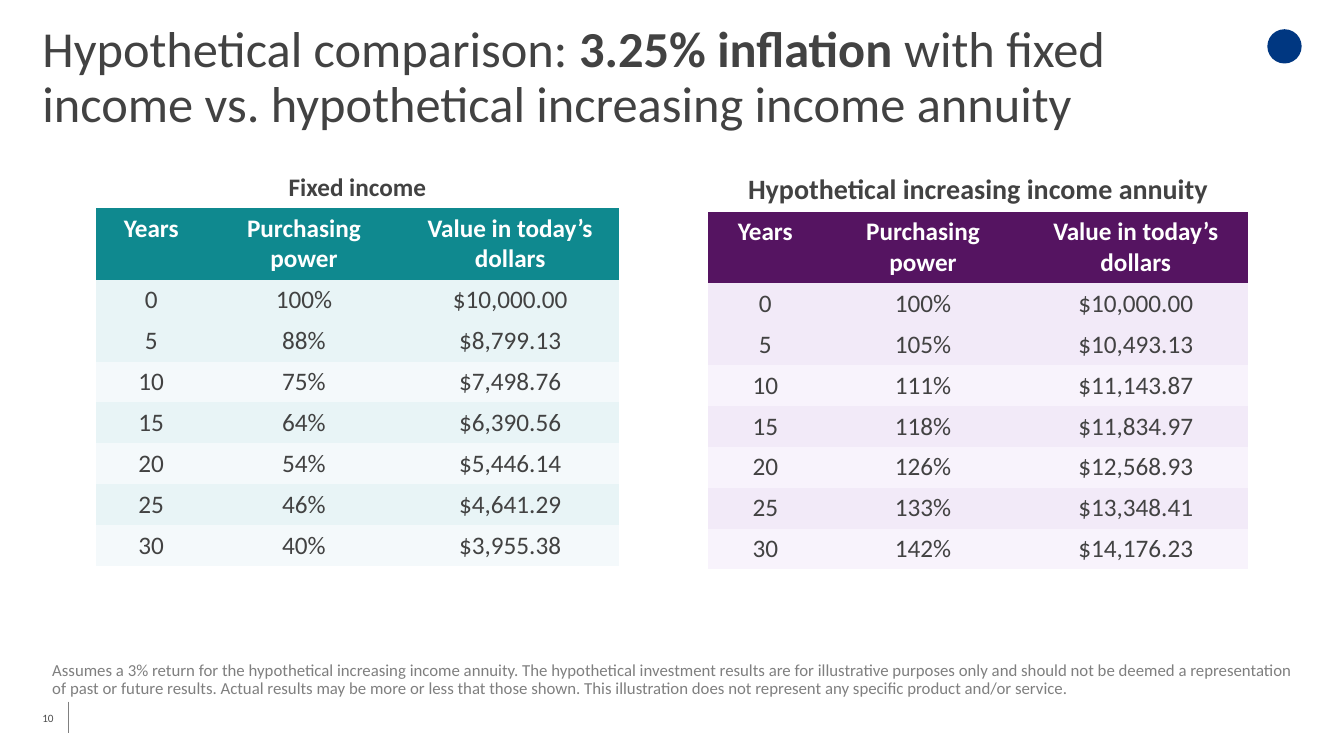
"""Build the slide comparing fixed income with an increasing income annuity."""
from dataclasses import dataclass
from typing import Any

from lxml.etree import SubElement
from pptx import Presentation
from pptx.dml.color import RGBColor
from pptx.enum.shapes import MSO_CONNECTOR, MSO_SHAPE
from pptx.enum.text import MSO_ANCHOR, MSO_AUTO_SIZE, PP_ALIGN
from pptx.oxml.ns import qn
from pptx.slide import Slide
from pptx.util import Emu, Pt

PX = 9144
NO_STYLE = "{2D5ABB26-0587-4C30-8999-92F81FD0307C}"


@dataclass(frozen=True)
class Theme:
    font: str = "Calibri"
    text: str = "424242"
    header: str = "FFFFFF"
    number: str = "4D4D4D"
    note: str = "7F7F7F"
    rule: str = "808080"
    emblem: str = "003781"
    title_pt: int = 36
    table_pt: int = 18
    note_pt: int = 12
    number_pt: int = 8


@dataclass(frozen=True)
class IncomeTable:
    caption: str
    caption_pt: int
    caption_px: int
    left: int
    widths: tuple[int, int, int]
    head: str
    dark: str
    light: str
    power: tuple[int, ...]
    value: tuple[float, ...]


@dataclass(frozen=True)
class Note:
    text: str
    box: tuple[int, int, int, int]
    size: int
    color: str
    spacing: float
    frame: dict[str, Any]


THEME = Theme()
HEADERS = ("Years", "Purchasing power", "Value in today’s dollars")
TABLE_TOP, HEADER_PX, ROW_PX = 166, 71, 40

TITLE = (
    ("Hypothetical comparison: ", False),
    ("3.25% inflation ", True),
    ("with fixed income vs. hypothetical increasing income annuity", False),
)

TABLES = (
    IncomeTable(
        "Fixed income", 18, 40, 95, (110, 193, 216), "0F898F", "E8F4F6", "F4F9FB",
        (100, 88, 75, 64, 54, 46, 40),
        (10000, 8799.13, 7498.76, 6390.56, 5446.14, 4641.29, 3955.38),
    ),
    IncomeTable(
        "Hypothetical increasing income annuity", 20, 43, 702, (114, 199, 223),
        "551461", "F2EAF8", "F8F3FC",
        (100, 105, 111, 118, 126, 133, 142),
        (10000, 10493.13, 11143.87, 11834.97, 12568.93, 13348.41, 14176.23),
    ),
)

NOTES = (
    Note(
        "Assumes a 3% return for the hypothetical increasing income annuity. "
        "The hypothetical investment results are for illustrative purposes only and "
        "should not be deemed a representation of past or future results. Actual "
        "results may be more or less that those shown. This illustration does not "
        "represent any specific product and/or service.",
        (42, 652, 1256, 40), THEME.note_pt, THEME.note, 0.9, {},
    ),
    Note(
        "10", (42, 692, 40, 40), THEME.number_pt, THEME.number, 1.0,
        {"margin_left": 0, "margin_right": 0, "vertical_anchor": MSO_ANCHOR.MIDDLE},
    ),
)


def px(*lengths: int) -> list[Emu]:
    """Turn px into EMU."""
    return [Emu(n * PX) for n in lengths]


def style(target: Any, values: dict[str, Any]) -> None:
    """Set each named attribute on the target."""
    for name, value in values.items():
        setattr(target, name, value)


def add_run(p: Any, text: str, size: int, color: str, bold: bool = False) -> None:
    """Append formatted text to a paragraph."""
    r = p.add_run()
    r.text = text
    style(r.font, {"name": THEME.font, "size": Pt(size), "bold": bold})
    r.font.color.rgb = RGBColor.from_string(color)


def add_title(s: Slide) -> None:
    """Fill and place the title placeholder."""
    sp = s.shapes.title
    style(sp, dict(zip(("left", "top", "width", "height"), px(42, 20, 1199, 112))))
    tf = sp.text_frame
    style(tf, {
        "margin_left": 0, "margin_right": 0, "margin_top": 0, "margin_bottom": 0,
        "word_wrap": True, "auto_size": MSO_AUTO_SIZE.NONE,
        "vertical_anchor": MSO_ANCHOR.BOTTOM,
    })
    p = tf.paragraphs[0]
    style(p, {"alignment": PP_ALIGN.LEFT, "line_spacing": 0.9})
    for text, bold in TITLE:
        add_run(p, text, THEME.title_pt, THEME.text, bold)


def add_note(s: Slide, note: Note) -> None:
    """Add a small text box."""
    tf = s.shapes.add_textbox(*px(*note.box)).text_frame
    style(tf, {"word_wrap": True, **note.frame})
    p = tf.paragraphs[0]
    p.line_spacing = note.spacing
    add_run(p, note.text, note.size, note.color)


def fill_cell(cell: Any, text: str, size: int, color: str, fill: str | None,
              bold: bool = False) -> None:
    """Write centred text in a cell and set its fill."""
    p = cell.text_frame.paragraphs[0]
    p.alignment = PP_ALIGN.CENTER
    add_run(p, text, size, color, bold)
    if fill is None:
        cell.fill.background()
    else:
        cell.fill.solid()
        cell.fill.fore_color.rgb = RGBColor.from_string(fill)


def add_income_table(s: Slide, spec: IncomeTable) -> None:
    """Add one captioned table of purchasing power by year."""
    heights = [spec.caption_px, HEADER_PX] + [ROW_PX] * len(spec.power)
    box = px(spec.left, TABLE_TOP, sum(spec.widths), sum(heights))
    table = s.shapes.add_table(len(heights), len(HEADERS), *box).table
    style(table, {"first_row": False, "horz_banding": False})
    table._tbl.tblPr.find(qn("a:tableStyleId")).text = NO_STYLE
    for column, width in zip(table.columns, px(*spec.widths)):
        column.width = width
    for row, height in zip(table.rows, px(*heights)):
        row.height = height
    table.cell(0, 0).merge(table.cell(0, 2))
    fill_cell(table.cell(0, 0), spec.caption, spec.caption_pt, THEME.text, None, True)
    for c, text in enumerate(HEADERS):
        fill_cell(table.cell(1, c), text, THEME.table_pt, THEME.header, spec.head, True)
    for i, (power, value) in enumerate(zip(spec.power, spec.value)):
        fill = spec.light if i and i % 2 == 0 else spec.dark
        for c, text in enumerate((f"{5 * i}", f"{power}%", f"${value:,.2f}")):
            fill_cell(table.cell(i + 2, c), text, THEME.table_pt, THEME.text, fill)


def add_marks(s: Slide) -> None:
    """Add the corner emblem and the rule beside the page number."""
    sp = s.shapes.add_shape(MSO_SHAPE.OVAL, *px(1257, 29, 34, 34))
    sp.shadow.inherit = False
    sp.fill.solid()
    sp.fill.fore_color.rgb = RGBColor.from_string(THEME.emblem)
    sp.line.fill.background()
    rule = s.shapes.add_connector(MSO_CONNECTOR.STRAIGHT, *px(68, 696, 68, 727))
    rule.line.width = Pt(0.75)
    rule.line.color.rgb = RGBColor.from_string(THEME.rule)
    SubElement(rule._element.spPr, qn("a:effectLst"))


def main() -> None:
    """Create the slide and save it."""
    prs = Presentation()
    prs.slide_width, prs.slide_height = px(1333, 750)
    s = prs.slides.add_slide(prs.slide_layouts[5])
    add_marks(s)
    add_title(s)
    for spec in TABLES:
        add_income_table(s, spec)
    for note in NOTES:
        add_note(s, note)
    prs.save("out.pptx")


if __name__ == "__main__":
    main()
